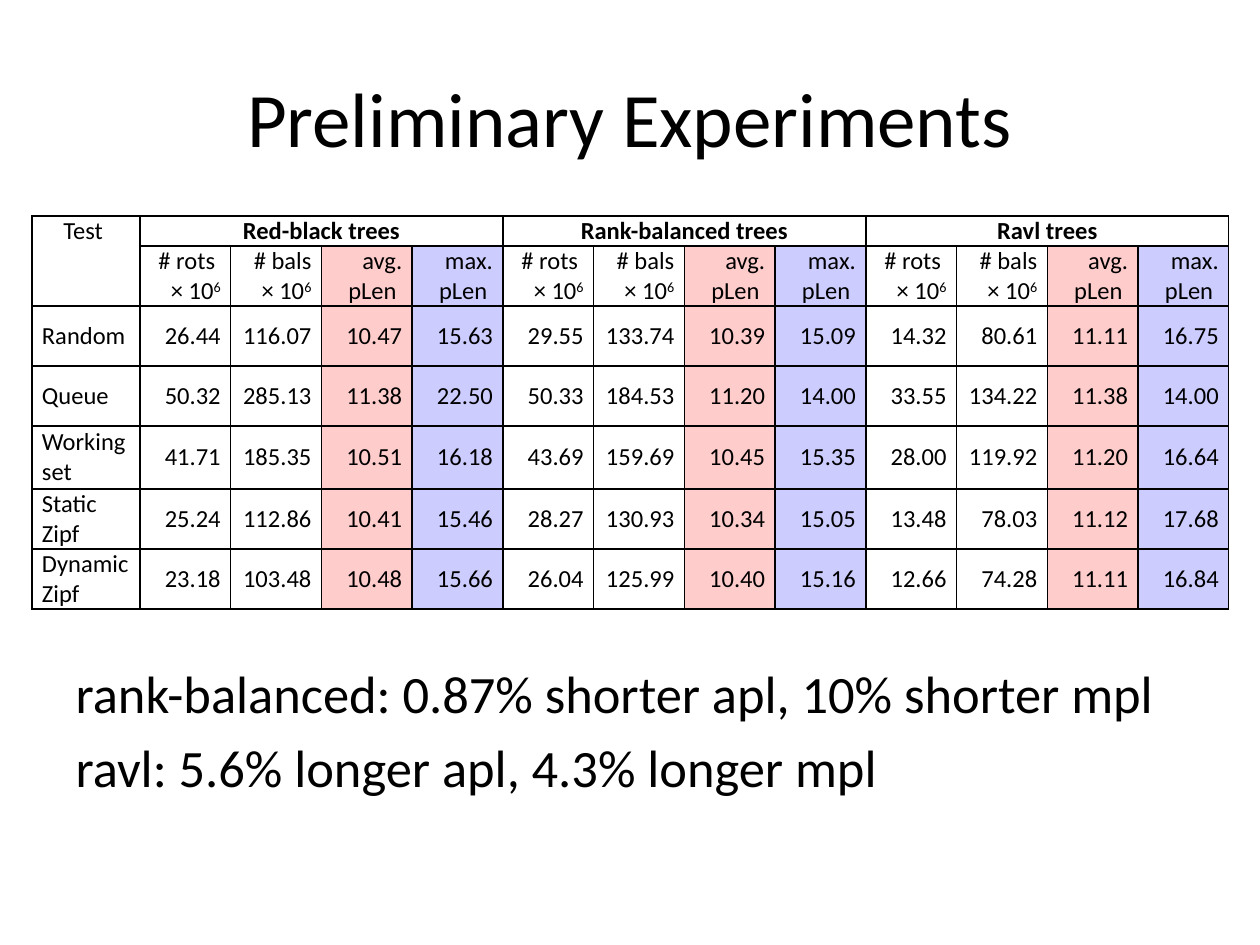
import dataclasses
import typing

import pptx
import pptx.dml.color
import pptx.enum.text
import pptx.oxml
import pptx.oxml.ns
import pptx.util

EMU_PER_PX = pptx.util.Inches(1) // 126
ALIGN = pptx.enum.text.PP_ALIGN
ANCHOR = pptx.enum.text.MSO_ANCHOR


@dataclasses.dataclass(frozen=True)
class Theme:
    font: str = "Calibri"
    text: str = "000000"
    border: str = "000000"
    average_fill: str = "FFCCCC"
    maximum_fill: str = "CCCCFF"
    title_size: int = 44
    body_size: int = 30
    table_size: int = 14
    border_width: int = 1


class Box(typing.NamedTuple):
    left: int
    top: int
    width: int
    height: int


class Measure(typing.NamedTuple):
    lines: tuple[str, str]
    exponent: str = ""
    fill: str | None = None


class TestResult(typing.NamedTuple):
    name: str
    values: str


THEME = Theme()
TITLE_BOX = Box(63, 38, 1134, 157)
BODY_BOX = Box(63, 221, 1134, 640)
BODY_TOP_INSET = 440
TABLE_BOX = Box(32, 216, 1197, 393)
TEST_COLUMN_WIDTH = 108
ROW_HEIGHTS = (30, 60, 60, 60, 63, 60, 60)
CELL_INSET = 10

TREES = ("Red-black trees", "Rank-balanced trees", "Ravl trees")
MEASURES = (
    Measure(("# rots ", "× 10"), exponent="6"),
    Measure(("# bals", "× 10"), exponent="6"),
    Measure(("avg.", "pLen "), fill=THEME.average_fill),
    Measure(("max.", "pLen "), fill=THEME.maximum_fill),
)
RESULTS = (
    TestResult("Random", "26.44 116.07 10.47 15.63 29.55 133.74 10.39 15.09 14.32 80.61 11.11 16.75"),
    TestResult("Queue", "50.32 285.13 11.38 22.50 50.33 184.53 11.20 14.00 33.55 134.22 11.38 14.00"),
    TestResult("Working set", "41.71 185.35 10.51 16.18 43.69 159.69 10.45 15.35 28.00 119.92 11.20 16.64"),
    TestResult("Static Zipf", "25.24 112.86 10.41 15.46 28.27 130.93 10.34 15.05 13.48 78.03 11.12 17.68"),
    TestResult("Dynamic Zipf", "23.18 103.48 10.48 15.66 26.04 125.99 10.40 15.16 12.66 74.28 11.11 16.84"),
)
FINDINGS = (
    "rank-balanced: 0.87% shorter apl, 10% shorter mpl",
    "ravl: 5.6% longer apl, 4.3% longer mpl",
)


def px(length: float) -> int:
    return round(length * EMU_PER_PX)


def place(shape, box: Box) -> None:
    shape.left, shape.top, shape.width, shape.height = map(px, box)


def style_paragraph(paragraph, size: int, align, bold: bool = False) -> None:
    paragraph.alignment = align
    paragraph.font.name = THEME.font
    paragraph.font.size = pptx.util.Pt(size)
    paragraph.font.bold = bold
    paragraph.font.color.rgb = pptx.dml.color.RGBColor.from_string(THEME.text)


def add_borders(cell) -> None:
    properties = cell._tc.get_or_add_tcPr()
    for index, side in enumerate(("lnL", "lnR", "lnT", "lnB")):
        line = pptx.oxml.parse_xml(
            f'<a:{side} {pptx.oxml.ns.nsdecls("a")} w="{pptx.util.Pt(THEME.border_width)}">'
            f'<a:solidFill><a:srgbClr val="{THEME.border}"/></a:solidFill></a:{side}>'
        )
        properties.insert(index, line)


def format_cell(cell, fill: str | None = None) -> None:
    cell.margin_left = cell.margin_right = px(CELL_INSET)
    cell.margin_top = cell.margin_bottom = 0
    if fill:
        cell.fill.solid()
        cell.fill.fore_color.rgb = pptx.dml.color.RGBColor.from_string(fill)
    else:
        cell.fill.background()
    add_borders(cell)


def write_cell(cell, text: str, align, anchor, bold: bool = False) -> None:
    cell.text = text
    cell.vertical_anchor = anchor
    for paragraph in cell.text_frame.paragraphs:
        style_paragraph(paragraph, THEME.table_size, align, bold)


def write_measure(cell, measure: Measure) -> None:
    write_cell(cell, "\n".join(measure.lines), ALIGN.RIGHT, ANCHOR.BOTTOM)
    if measure.exponent:
        run = cell.text_frame.paragraphs[-1].add_run()
        run.text = measure.exponent
        run._r.get_or_add_rPr().set("baseline", "30000")


def add_results_table(slide) -> None:
    value_count = len(TREES) * len(MEASURES)
    table = slide.shapes.add_table(len(ROW_HEIGHTS), value_count + 1, *map(px, TABLE_BOX)).table
    table.first_row = table.horz_banding = False

    # Grid
    value_width = (TABLE_BOX.width - TEST_COLUMN_WIDTH) / value_count
    for index, column in enumerate(table.columns):
        column.width = px(value_width if index else TEST_COLUMN_WIDTH)
    for row, height in zip(table.rows, ROW_HEIGHTS):
        row.height = px(height)
    for row_index, row in enumerate(table.rows):
        for column_index, cell in enumerate(row.cells):
            shaded = row_index > 0 and column_index > 0
            measure = MEASURES[(column_index - 1) % len(MEASURES)]
            format_cell(cell, measure.fill if shaded else None)

    # Header rows
    table.cell(0, 0).merge(table.cell(1, 0))
    write_cell(table.cell(0, 0), "Test ", ALIGN.CENTER, ANCHOR.TOP)
    for tree_index, tree in enumerate(TREES):
        first = 1 + tree_index * len(MEASURES)
        table.cell(0, first).merge(table.cell(0, first + len(MEASURES) - 1))
        write_cell(table.cell(0, first), tree, ALIGN.CENTER, ANCHOR.TOP, bold=True)
        for offset, measure in enumerate(MEASURES):
            write_measure(table.cell(1, first + offset), measure)

    # Result rows
    for row_index, result in enumerate(RESULTS, start=2):
        write_cell(table.cell(row_index, 0), result.name, ALIGN.LEFT, ANCHOR.MIDDLE)
        for column_index, value in enumerate(result.values.split(), start=1):
            write_cell(table.cell(row_index, column_index), value, ALIGN.RIGHT, ANCHOR.MIDDLE)


def fill_title(title) -> None:
    place(title, TITLE_BOX)
    title.text_frame.text = "Preliminary Experiments"
    title.text_frame.vertical_anchor = ANCHOR.MIDDLE
    style_paragraph(title.text_frame.paragraphs[0], THEME.title_size, ALIGN.CENTER)


def fill_findings(body) -> None:
    place(body, BODY_BOX)
    frame = body.text_frame
    frame.text = "\n".join(FINDINGS)
    frame.auto_size = pptx.enum.text.MSO_AUTO_SIZE.NONE
    frame.vertical_anchor = ANCHOR.TOP
    frame.margin_top = px(BODY_TOP_INSET)
    for index, paragraph in enumerate(frame.paragraphs):
        style_paragraph(paragraph, THEME.body_size, ALIGN.LEFT)
        paragraph.space_before = pptx.util.Pt(6 if index else 0)
        properties = paragraph._p.get_or_add_pPr()
        properties.set("marL", "0")
        properties.set("indent", "0")
        no_bullet = pptx.oxml.parse_xml(f'<a:buNone {pptx.oxml.ns.nsdecls("a")}/>')
        properties.find(pptx.oxml.ns.qn("a:defRPr")).addprevious(no_bullet)


def main() -> None:
    presentation = pptx.Presentation()
    presentation.slide_width = pptx.util.Inches(10)
    presentation.slide_height = pptx.util.Inches(7.5)
    slide = presentation.slides.add_slide(presentation.slide_layouts[1])
    fill_title(slide.shapes.title)
    fill_findings(slide.placeholders[1])
    add_results_table(slide)
    presentation.save("out.pptx")


if __name__ == "__main__":
    main()
